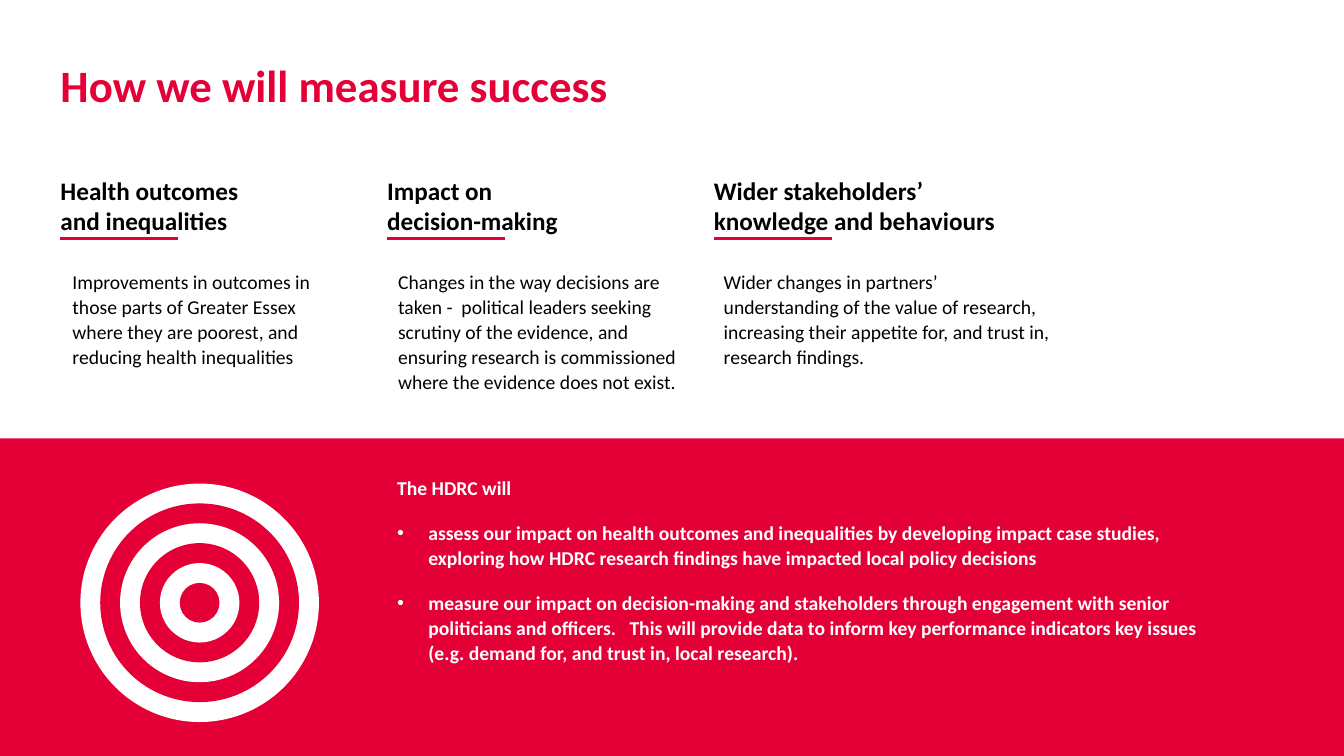
from lxml import etree
from pptx import Presentation
from pptx.dml.color import RGBColor
from pptx.enum import shapes, text
from pptx.oxml import ns
from pptx.util import Inches, Pt

RED = RGBColor(0xE4, 0x00, 0x37)
WHITE = RGBColor(0xFF, 0xFF, 0xFF)
BLACK = RGBColor(0, 0, 0)
FONT = "Calibri"

MEASURES = [
    (0.6, 2.0, "Health outcomes and inequalities", 0.62, 2.81,
     "Improvements in outcomes in those parts of Greater Essex where they are "
     "poorest, and reducing health inequalities"),
    (3.84, 1.93, "Impact on decision-making", 3.85, 3.03,
     "Changes in the way decisions are taken -  political leaders seeking "
     "scrutiny of the evidence, and ensuring research is commissioned where "
     "the evidence does not exist."),
    (7.08, 2.81, "Wider stakeholders’ knowledge and behaviours", 7.08, 3.43,
     "Wider changes in partners’ understanding of the value of research, "
     "increasing their appetite for, and trust in, research findings."),
]
COMMITMENTS = [
    "assess our impact on health outcomes and inequalities by developing impact "
    "case studies, exploring how HDRC research findings have impacted local "
    "policy decisions",
    "measure our impact on decision-making and stakeholders through engagement "
    "with senior politicians and officers.   This will provide data to inform "
    "key performance indicators key issues (e.g. demand for, and trust in, "
    "local research).",
]


def format_paragraph(paragraph, size, color, bold=False, spacing=None):
    paragraph.alignment = text.PP_ALIGN.LEFT
    paragraph.line_spacing = spacing
    font = paragraph.font
    font.name, font.size, font.bold = FONT, Pt(size), bold
    font.color.rgb = color


def prepare_frame(frame, inset=True):
    frame.word_wrap = True
    frame.auto_size = text.MSO_AUTO_SIZE.NONE
    frame.vertical_anchor = text.MSO_ANCHOR.TOP
    if not inset:
        frame.margin_left = frame.margin_right = 0
        frame.margin_top = frame.margin_bottom = 0


def add_title(slide, wording):
    title = slide.shapes.title
    title.left, title.top = Inches(0.6), Inches(0.57)
    title.width, title.height = Inches(8.1), Inches(1.16)
    title.text_frame.text = wording
    prepare_frame(title.text_frame, inset=False)
    format_paragraph(title.text_frame.paragraphs[0], 32, RED, bold=True)


def add_text(slide, left, top, width, height, wording, inset=True):
    """Add a wrapped text box and return its text frame."""
    box = slide.shapes.add_textbox(
        Inches(left), Inches(top), Inches(width), Inches(height))
    box.text_frame.text = wording
    prepare_frame(box.text_frame, inset)
    return box.text_frame


def add_filled(slide, kind, left, top, width, height, color):
    shape = slide.shapes.add_shape(
        kind, Inches(left), Inches(top), Inches(width), Inches(height))
    shape.shadow.inherit = False
    shape.fill.solid()
    shape.fill.fore_color.rgb = color
    shape.line.fill.background()


def add_target(slide, center_x, center_y, diameter, rings):
    """Draw concentric discs in alternating red and white."""
    step = diameter / rings
    for ring in range(rings):
        size = diameter - ring * step
        add_filled(slide, shapes.MSO_SHAPE.OVAL, center_x - size / 2,
                   center_y - size / 2, size, size, WHITE if ring % 2 else RED)


def add_underline(slide, left, top, length):
    rule = slide.shapes.add_connector(
        shapes.MSO_CONNECTOR.STRAIGHT, Inches(left), Inches(top),
        Inches(left + length), Inches(top))
    rule.line.color.rgb = RED
    rule.line.width = Pt(2.25)
    etree.SubElement(rule._element.spPr, ns.qn("a:effectLst"))


def add_measure(slide, left, width, heading, body_left, body_width, body):
    heading_frame = add_text(slide, left, 1.74, width, 1.16, heading, inset=False)
    format_paragraph(heading_frame.paragraphs[0], 18, BLACK, bold=True)
    body_frame = add_text(slide, body_left, 2.61, body_width, 1.35, body)
    format_paragraph(body_frame.paragraphs[0], 14, BLACK, spacing=1.07)
    add_underline(slide, left, 2.37, 1.17)


def add_bullet(paragraph, indent):
    properties = paragraph._p.get_or_add_pPr()
    properties.set("marL", str(Inches(indent)))
    properties.set("indent", str(-Inches(indent)))
    etree.SubElement(properties, ns.qn("a:buFont")).set("typeface", "Arial")
    etree.SubElement(properties, ns.qn("a:buChar")).set("char", "•")


def add_commitments(slide):
    frame = add_text(slide, 3.84, 4.66, 8.49, 2, "The HDRC will")
    for commitment in COMMITMENTS:
        frame.add_paragraph().text = commitment
    for number, paragraph in enumerate(frame.paragraphs):
        format_paragraph(paragraph, 14, WHITE, bold=True, spacing=1.07)
        paragraph.space_before, paragraph.space_after = Pt(6), Pt(8)
        if number:
            # The bullet must precede the default run properties in the schema.
            properties = paragraph._p.get_or_add_pPr()
            defaults = properties.find(ns.qn("a:defRPr"))
            add_bullet(paragraph, 0.31)
            properties.append(defaults)


def main():
    deck = Presentation()
    deck.slide_width, deck.slide_height = Inches(13.33), Inches(7.5)
    slide = deck.slides.add_slide(deck.slide_layouts.get_by_name("Title Only"))
    add_title(slide, "How we will measure success")
    add_filled(slide, shapes.MSO_SHAPE.RECTANGLE, 0, 4.35, 13.33, 3.15, RED)
    add_target(slide, 1.98, 5.98, 2.76, 7)
    for measure in MEASURES:
        add_measure(slide, *measure)
    add_commitments(slide)
    deck.save("out.pptx")


if __name__ == "__main__":
    main()
